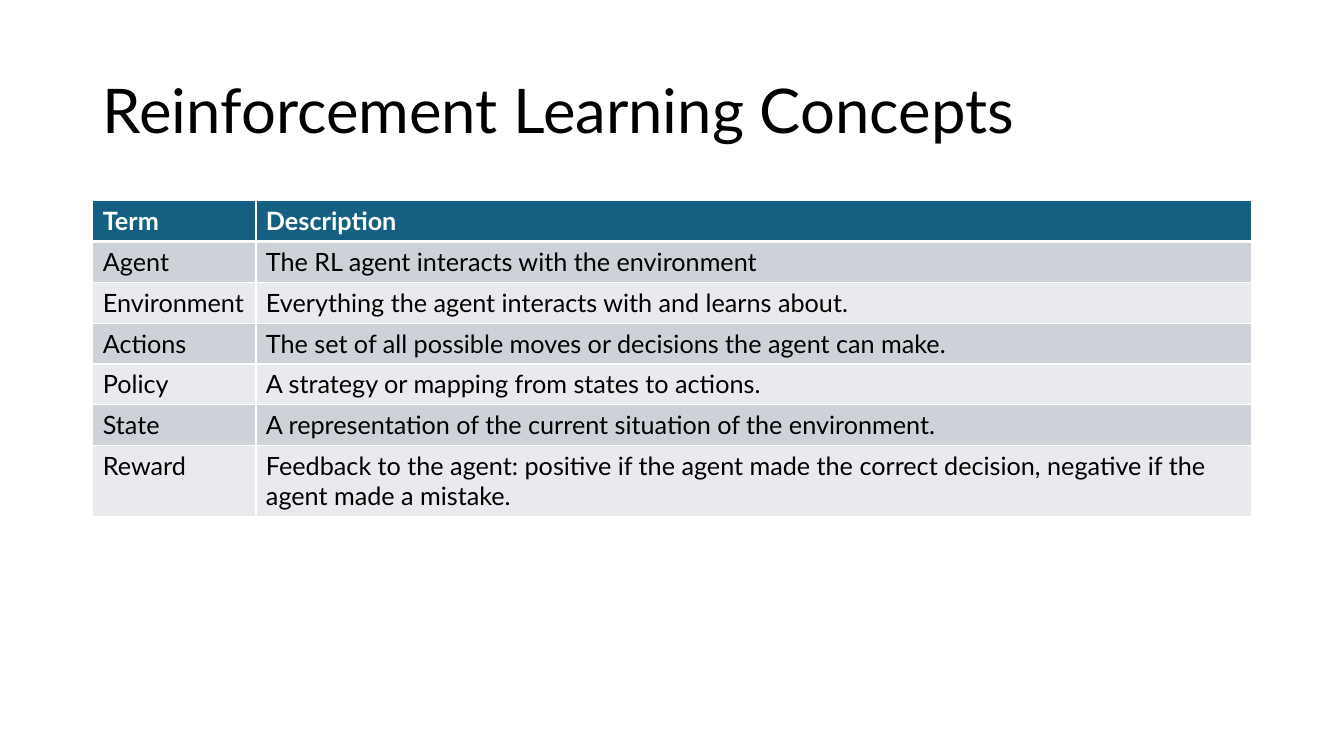
from lxml.etree import SubElement as Sub
from pptx import Presentation
from pptx.dml.color import RGBColor as RGB
from pptx.enum.text import MSO_ANCHOR as Anchor, MSO_AUTO_SIZE as AutoSize, PP_ALIGN as Align
from pptx.oxml.ns import qn
from pptx.util import Inches, Pt

COLORS = {
    "ink": "000000",
    "white": "FFFFFF",
    "header": "156082",
    "dark_band": "CCD2D8",
    "light_band": "E8EAED",
}
CONCEPTS = [
    ("Term", "Description"),
    ("Agent", "The RL agent interacts with the environment"),
    ("Environment", "Everything the agent interacts with and learns about."),
    ("Actions", "The set of all possible moves or decisions the agent can make."),
    ("Policy", "A strategy or mapping from states to actions."),
    ("State", "A representation of the current situation of the environment."),
    ("Reward", "Feedback to the agent: positive if the agent made the correct decision, "
               "negative if the agent made a mistake."),
]


class Deck:
    width, height, margin = 13.33, 7.5, 0.92
    columns, rows = 12, 18.5
    font = "Lato"

    def __init__(self):
        self.prs = Presentation()
        self.prs.slide_width = Inches(self.width)
        self.prs.slide_height = Inches(self.height)
        self.s = self.prs.slides.add_slide(self.prs.slide_layouts[5])

    def cols(self, n):
        return Inches(n * (self.width - 2 * self.margin) / self.columns)

    def lines(self, n):
        return Inches(n * self.height / self.rows)

    def place(self, top, height):
        return Inches(self.margin), self.lines(top), self.cols(self.columns), self.lines(height)

    def add_text(self, tf, text, color, **formats):
        p = tf.paragraphs[0]
        r = p.add_run()
        r.text = text
        for name, value in {"name": self.font, **formats}.items():
            setattr(r.font, name, value)
        r.font.color.rgb = RGB.from_string(COLORS[color])
        return p

    def title(self, text, top, height):
        sp = self.s.shapes.title
        sp.left, sp.top, sp.width, sp.height = self.place(top, height)
        tf = sp.text_frame
        frame = {"word_wrap": True, "auto_size": AutoSize.NONE, "vertical_anchor": Anchor.MIDDLE}
        for name, value in frame.items():
            setattr(tf, name, value)
        p = self.add_text(tf, text, "ink", size=Pt(44))
        p.alignment, p.line_spacing = Align.LEFT, 0.9

    def borders(self, cell, **widths):
        tcPr = cell._tc.get_or_add_tcPr()
        for side in ("lnL", "lnR", "lnT", "lnB"):
            ln = Sub(tcPr, qn(f"a:{side}"), w=str(Pt(widths.get(side, 1))))
            Sub(Sub(ln, qn("a:solidFill")), qn("a:srgbClr"), val=COLORS["white"])

    def table(self, data, top, col_shares, row_shares):
        box = self.place(top, sum(row_shares))
        table = self.s.shapes.add_table(len(data), len(data[0]), *box).table
        for column, share in zip(table.columns, col_shares):
            column.width = self.cols(share)
        for i, (row, share, texts) in enumerate(zip(table.rows, row_shares, data)):
            row.height = self.lines(share)
            header = i == 0
            band = "header" if header else "dark_band" if i % 2 else "light_band"
            for cell, text in zip(row.cells, texts):
                self.borders(cell, lnT=3 if i == 1 else 1, lnB=3 if header else 1)
                cell.fill.solid()
                cell.fill.fore_color.rgb = RGB.from_string(COLORS[band])
                color = "white" if header else "ink"
                self.add_text(cell.text_frame, text, color, size=Pt(18), bold=header)


def main():
    deck = Deck()
    deck.title("Reinforcement Learning Concepts", top=0.99, height=3.58)
    deck.table(CONCEPTS, top=4.91, col_shares=(1.69, 10.31), row_shares=[1] * 6 + [1.72])
    deck.prs.save("out.pptx")


if __name__ == "__main__":
    main()
